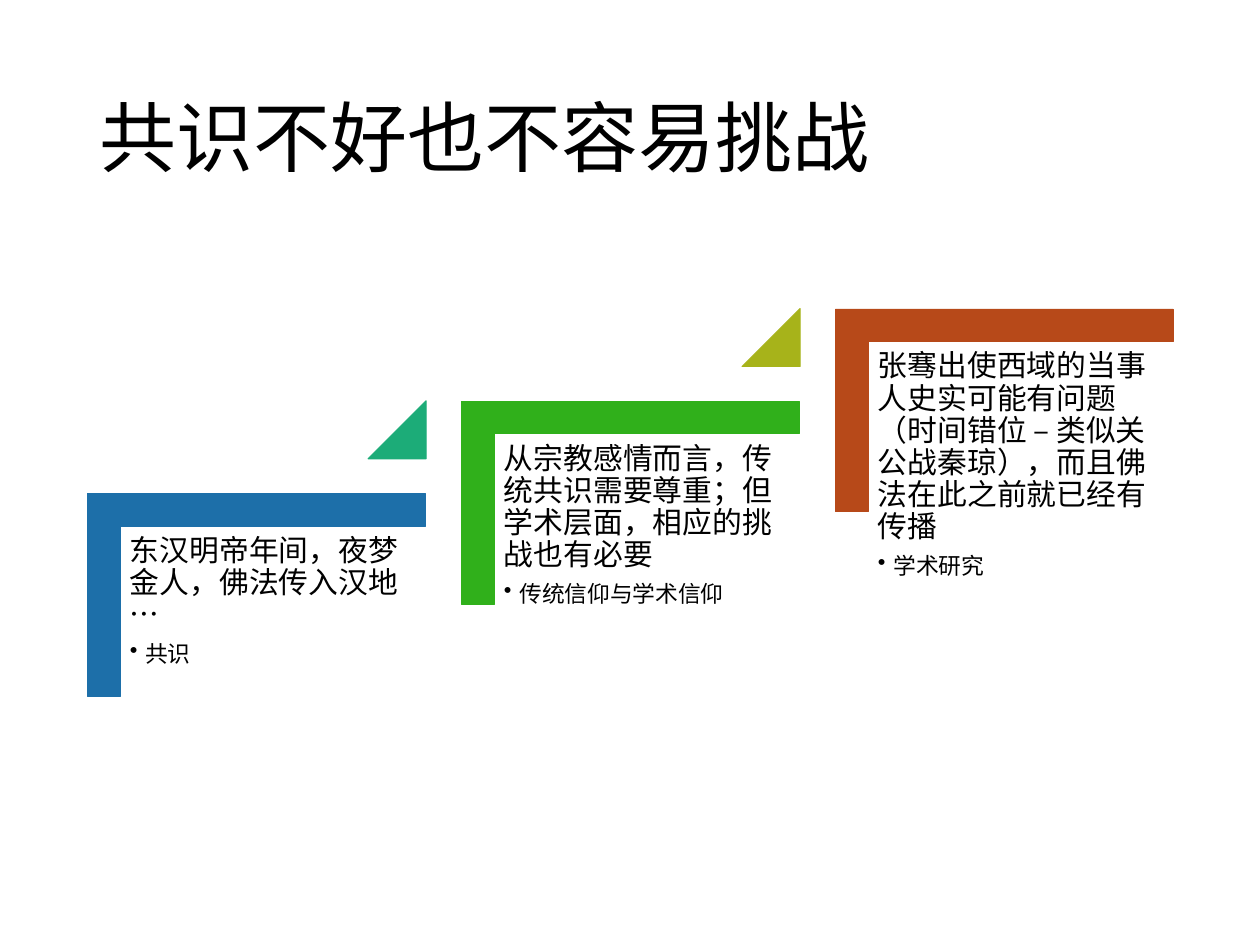
"""Build a slide with three rising steps, from consensus to academic research."""
from lxml import etree
from pptx import Presentation
from pptx.dml.color import RGBColor
from pptx.enum.shapes import MSO_SHAPE
from pptx.enum.text import MSO_ANCHOR
from pptx.oxml.ns import qn
from pptx.util import Cm, Pt

CORNER = MSO_SHAPE.CORNER
TRIANGLE = MSO_SHAPE.ISOSCELES_TRIANGLE
TOP, MIDDLE = MSO_ANCHOR.TOP, MSO_ANCHOR.MIDDLE

FONT = "Times New Roman"
BLACK = RGBColor(0x00, 0x00, 0x00)
BLUE = RGBColor(0x1D, 0x6F, 0xA9)
TEAL = RGBColor(0x1C, 0xAC, 0x78)
GREEN = RGBColor(0x30, 0xB0, 0x1B)
OLIVE = RGBColor(0xA7, 0xB3, 0x1A)
RUST = RGBColor(0xB7, 0x49, 0x19)

STEP_ACROSS = 7.54
STEP_UP = 1.86
BULLET_INDENT = Cm(0.31)

STEPS = [
    ("东汉明帝年间，夜梦金人，佛法传入汉地 …", "共识", BLUE, TEAL),
    ("从宗教感情而言，传统共识需要尊重；但学术层面，相应的挑战也有必要",
     "传统信仰与学术信仰", GREEN, OLIVE),
    ("张骞出使西域的当事人史实可能有问题（时间错位 – 类似关公战秦琼），而且佛法在此之前就已经有传播",
     "学术研究", RUST, None),
]


def add_solid(page, kind, left, top, width, height, color, adjustments):
    """Add a plain coloured preset shape and return it."""
    shape = page.shapes.add_shape(kind, Cm(left), Cm(top), Cm(width), Cm(height))
    for index, value in enumerate(adjustments):
        shape.adjustments[index] = value
    shape.shadow.inherit = False
    shape.fill.solid()
    shape.fill.fore_color.rgb = color
    shape.line.color.rgb = color
    shape.line.width = Pt(0.5)
    return shape


def add_text_frame(page, left, top, width, height, anchor):
    """Add a wrapping text box and return its text frame."""
    box = page.shapes.add_textbox(Cm(left), Cm(top), Cm(width), Cm(height))
    frame = box.text_frame
    frame.word_wrap = True
    frame.vertical_anchor = anchor
    return frame


def write(para, text, size, space_after=0):
    """Write one styled run into a paragraph."""
    para.line_spacing = 0.9
    para.space_after = Pt(space_after)
    span = para.add_run()
    span.text = text
    span.font.size = Pt(size)
    span.font.name = FONT
    span.font.color.rgb = BLACK


def add_bullet(para):
    """Give a paragraph a hanging round bullet."""
    para.level = 1
    properties = para._p.get_or_add_pPr()
    properties.set("marL", str(BULLET_INDENT))
    properties.set("indent", str(-BULLET_INDENT))
    etree.SubElement(properties, qn("a:buChar")).set("char", "•")


def add_title(page, text):
    """Add the slide title."""
    frame = add_text_frame(page, 1.75, 1.02, 21.9, 3.68, MIDDLE)
    write(frame.paragraphs[0], text, 44)


def add_step(page, index, statement, label, color, marker_color):
    """Add one step: its corner, its text and the marker to the next step."""
    across, up = index * STEP_ACROSS, index * STEP_UP
    corner = add_solid(page, CORNER, 3.12 + across, 8.59 - up, 4.09, 6.81,
                       color, (0.161, 0.161))
    corner.rotation = 90

    frame = add_text_frame(page, 2.44 + across, 10.62 - up, 6.15, 5.38, TOP)
    frame.margin_left = frame.margin_right = Cm(0.18)
    frame.margin_top = frame.margin_bottom = Cm(0.18)
    write(frame.paragraphs[0], statement, 17, 6)
    bullet = frame.add_paragraph()
    write(bullet, label, 13, 2)
    add_bullet(bullet)

    if marker_color is not None:
        add_solid(page, TRIANGLE, 7.42 + across, 8.08 - up, 1.17, 1.17,
                  marker_color, (1,))


def main():
    """Build and save the deck."""
    deck = Presentation()
    deck.slide_width, deck.slide_height = Cm(25.4), Cm(19.05)
    page = deck.slides.add_slide(deck.slide_layouts[6])
    add_title(page, "共识不好也不容易挑战")
    for index, step in enumerate(STEPS):
        add_step(page, index, *step)
    deck.save("out.pptx")


if __name__ == "__main__":
    main()
